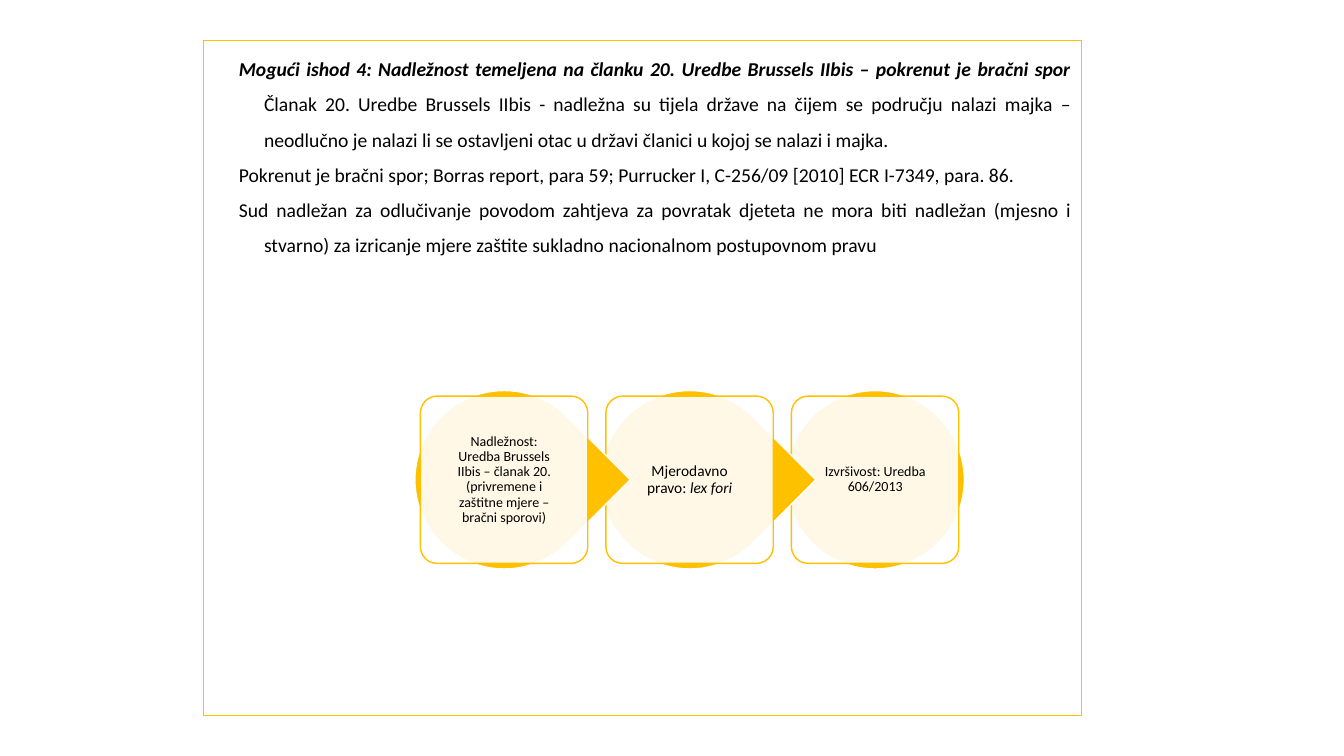
"""Build the slide on outcome 4: jurisdiction, applicable law and enforceability."""
from lxml.etree import SubElement
from pptx import Presentation
from pptx.dml.color import RGBColor
from pptx.enum.shapes import MSO_SHAPE as Shape
from pptx.enum.text import MSO_ANCHOR as Anchor, PP_ALIGN as Align
from pptx.oxml.ns import qn
from pptx.util import Inches, Pt

GOLD, WHITE, BLACK = "FFC000", "FFFFFF", "000000"


def add_outlined(preset, left, top, width, height, fill, line, weight):
    shape = slide.shapes.add_shape(
        preset, Inches(left), Inches(top), Inches(width), Inches(height))
    shape.shadow.inherit = False
    shape.fill.solid()
    shape.fill.fore_color.rgb = RGBColor.from_string(fill)
    shape.line.color.rgb = RGBColor.from_string(line)
    shape.line.width = Pt(weight)
    return shape


def add_runs(paragraph, runs, size, spacing, align):
    paragraph.alignment = align
    paragraph.line_spacing = spacing
    paragraph.font.size = Pt(size)
    paragraph.font.name = "Calibri"
    paragraph.font.color.rgb = RGBColor.from_string(BLACK)
    for wording, bold, italic in runs:
        run = paragraph.add_run()
        run.text = wording
        run.font.bold, run.font.italic = bold, italic


deck = Presentation()
deck.slide_width, deck.slide_height = Inches(13.33), Inches(7.5)
slide = deck.slides.add_slide(deck.slide_layouts[6])

outcome = [
    [("Mogući ishod 4: Nadležnost temeljena na članku 20. Uredbe Brussels IIbis – "
      "pokrenut je bračni spor ", True, True),
     ("Članak 20. Uredbe Brussels IIbis - nadležna su tijela države na čijem se "
      "području nalazi majka – neodlučno je nalazi li se ostavljeni otac u državi "
      "članici u kojoj se nalazi i majka.", False, False)],
    [("Pokrenut je bračni spor; Borras report, para 59; Purrucker I, C-256/09 [2010] "
      "ECR I-7349, para. 86.", False, False)],
    [("Sud nadležan za odlučivanje povodom zahtjeva za povratak djeteta ne mora biti "
      "nadležan (mjesno i stvarno) za izricanje mjere zaštite sukladno nacionalnom "
      "postupovnom pravu", False, False)],
]
panel = add_outlined(Shape.RECTANGLE, 2.02, 0.4, 8.71, 6.7, WHITE, GOLD, 0.75)
panel.text_frame.vertical_anchor = Anchor.TOP
for index, runs in enumerate(outcome):
    paragraph = panel.text_frame.add_paragraph() if index else panel.text_frame.paragraphs[0]
    add_runs(paragraph, runs, 14, 1.5, Align.JUSTIFY)
    indents = paragraph._p.get_or_add_pPr()
    indents.set("marL", str(Inches(0.5)))
    indents.set("indent", str(Inches(-0.25)))

steps = [
    ([("Nadležnost: Uredba Brussels IIbis – članak 20. (privremene i zaštitne mjere – "
       "bračni sporovi)", False, False)], 10),
    ([("Mjerodavno pravo: ", False, False), ("lex fori", False, True)], 11),
    ([("Izvršivost: Uredba 606/2013", False, False)], 10),
]
FIRST_CENTER, PITCH, MIDDLE = 5.0, 1.84, 4.76
DISC, CARD, LABEL = 1.77, 1.66, 1.12

for index, (runs, size) in reversed(list(enumerate(steps))):
    center = FIRST_CENTER + index * PITCH
    is_last = index == len(steps) - 1
    disc = add_outlined(Shape.OVAL if is_last else Shape.TEAR, center - DISC / 2,
                        MIDDLE - DISC / 2, DISC, DISC, GOLD, WHITE, 1)
    if not is_last:
        disc.rotation = 45
        disc.adjustments[0] = 1

    card = add_outlined(Shape.ROUNDED_RECTANGLE, center - CARD / 2,
                        MIDDLE - CARD / 2, CARD, CARD, WHITE, GOLD, 1)
    card.adjustments[0] = 0.1
    card_color = card.fill._xPr.find(qn("a:solidFill")).find(qn("a:srgbClr"))
    SubElement(card_color, qn("a:alpha"), val="90000")

    label = slide.shapes.add_textbox(
        Inches(center - LABEL / 2), Inches(MIDDLE - LABEL / 2), Inches(LABEL), Inches(LABEL))
    frame = label.text_frame
    frame.word_wrap = True
    frame.vertical_anchor = Anchor.MIDDLE
    frame.margin_left = frame.margin_right = Inches(0.01)
    frame.margin_top = frame.margin_bottom = Inches(0.01)
    add_runs(frame.paragraphs[0], runs, size, 0.9, Align.CENTER)

deck.save("out.pptx")
